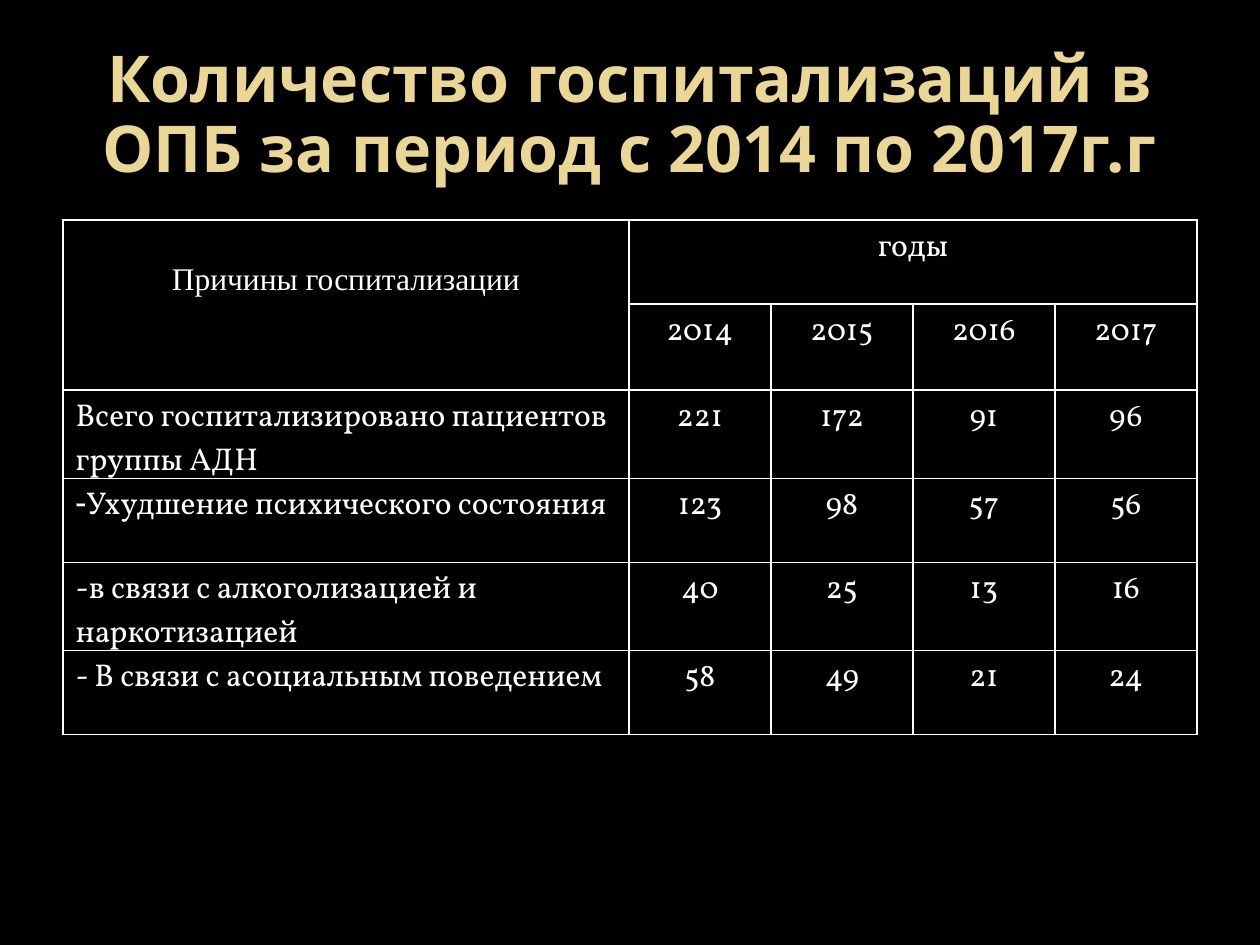
from lxml.etree import SubElement
from pptx import Presentation
from pptx.dml.color import RGBColor
from pptx.enum.text import MSO_ANCHOR, PP_ALIGN
from pptx.oxml import parse_xml
from pptx.oxml.ns import nsdecls, qn
from pptx.util import Emu, Pt

BLACK = RGBColor(0x00, 0x00, 0x00)
WHITE = RGBColor(0xFF, 0xFF, 0xFF)
GOLD = RGBColor(0xEA, 0xD6, 0x96)

TITLE = "Количество госпитализаций в ОПБ за период с 2014 по 2017г.г"
YEARS = ["2014", "2015", "2016", "2017"]
REASONS = [
    ("Всего госпитализировано пациентов группы АДН", [221, 172, 91, 96]),
    ("Ухудшение психического состояния", [123, 98, 57, 56]),
    ("-в связи с алкоголизацией и наркотизацией", [40, 25, 13, 16]),
    ("- В связи с асоциальным поведением", [58, 49, 21, 24]),
]
BULLETED_REASON = REASONS[1][0]

REASON_WIDTH, YEAR_WIDTH, ROW_HEIGHT = 566, 142, 84
HEADER_ROWS = 2


def px(length):
    return Emu(round(length * 914400 / 126))


def add_run(paragraph, text, font_name, size, color, bold=False):
    run = paragraph.add_run()
    run.text = text
    run.font.name = font_name
    run.font.size = Pt(size)
    run.font.bold = bold
    run.font.color.rgb = color


def add_title(slide):
    box = slide.shapes.add_textbox(px(63), px(38), px(1134), px(157))
    frame = box.text_frame
    frame.word_wrap = True
    frame.vertical_anchor = MSO_ANCHOR.MIDDLE
    paragraph = frame.paragraphs[0]
    paragraph.alignment = PP_ALIGN.CENTER
    paragraph.line_spacing = 0.9
    add_run(paragraph, TITLE, "Open Sans", 36.9, GOLD, bold=True)


def style_cell(cell):
    """Clear the fill and draw a thin white line on every side."""
    cell.fill.background()
    properties = cell._tc.get_or_add_tcPr()
    for position, side in enumerate(("lnL", "lnR", "lnT", "lnB")):
        properties.insert(position, parse_xml(
            f'<a:{side} {nsdecls("a")} w="{Pt(1)}"><a:solidFill>'
            f'<a:srgbClr val="{WHITE}"/></a:solidFill></a:{side}>'))


def write_cell(cell, text, alignment=PP_ALIGN.CENTER, font_name="Vollkorn"):
    paragraph = cell.text_frame.paragraphs[0]
    paragraph.alignment = alignment
    add_run(paragraph, text, font_name, 18, WHITE)
    return paragraph


def add_dash_bullet(paragraph):
    properties = paragraph._p.get_or_add_pPr()
    properties.set("marL", "0")
    properties.set("indent", "0")
    SubElement(properties, qn("a:buChar")).set("char", "-")


def add_reasons_table(slide):
    row_count = HEADER_ROWS + len(REASONS)
    column_widths = [REASON_WIDTH] + [YEAR_WIDTH] * len(YEARS)
    table = slide.shapes.add_table(
        row_count, len(column_widths), px(63), px(220),
        px(sum(column_widths)), px(ROW_HEIGHT * row_count)).table
    table.first_row = table.horz_banding = False
    for column, width in zip(table.columns, column_widths):
        column.width = px(width)
    for row in table.rows:
        row.height = px(ROW_HEIGHT)
    for cell in table.iter_cells():
        style_cell(cell)

    # Merged header cells and years
    reason_header, years_header = table.cell(0, 0), table.cell(0, 1)
    reason_header.merge(table.cell(1, 0))
    years_header.merge(table.cell(0, len(YEARS)))
    reason_header.margin_top = px(42)
    write_cell(reason_header, "Причины госпитализации",
               font_name="Times New Roman")
    write_cell(years_header, "годы")
    for column, year in enumerate(YEARS, start=1):
        write_cell(table.cell(1, column), year)

    # Reasons and yearly counts
    for row, (reason, counts) in enumerate(REASONS, start=HEADER_ROWS):
        paragraph = write_cell(table.cell(row, 0), reason, PP_ALIGN.LEFT)
        if reason == BULLETED_REASON:
            add_dash_bullet(paragraph)
        for column, count in enumerate(counts, start=1):
            write_cell(table.cell(row, column), str(count))


def main():
    presentation = Presentation()
    presentation.slide_width = px(1260)
    presentation.slide_height = px(945)
    slide = presentation.slides.add_slide(presentation.slide_layouts[6])
    slide.background.fill.solid()
    slide.background.fill.fore_color.rgb = BLACK
    add_title(slide)
    add_reasons_table(slide)
    presentation.save("out.pptx")


if __name__ == "__main__":
    main()
